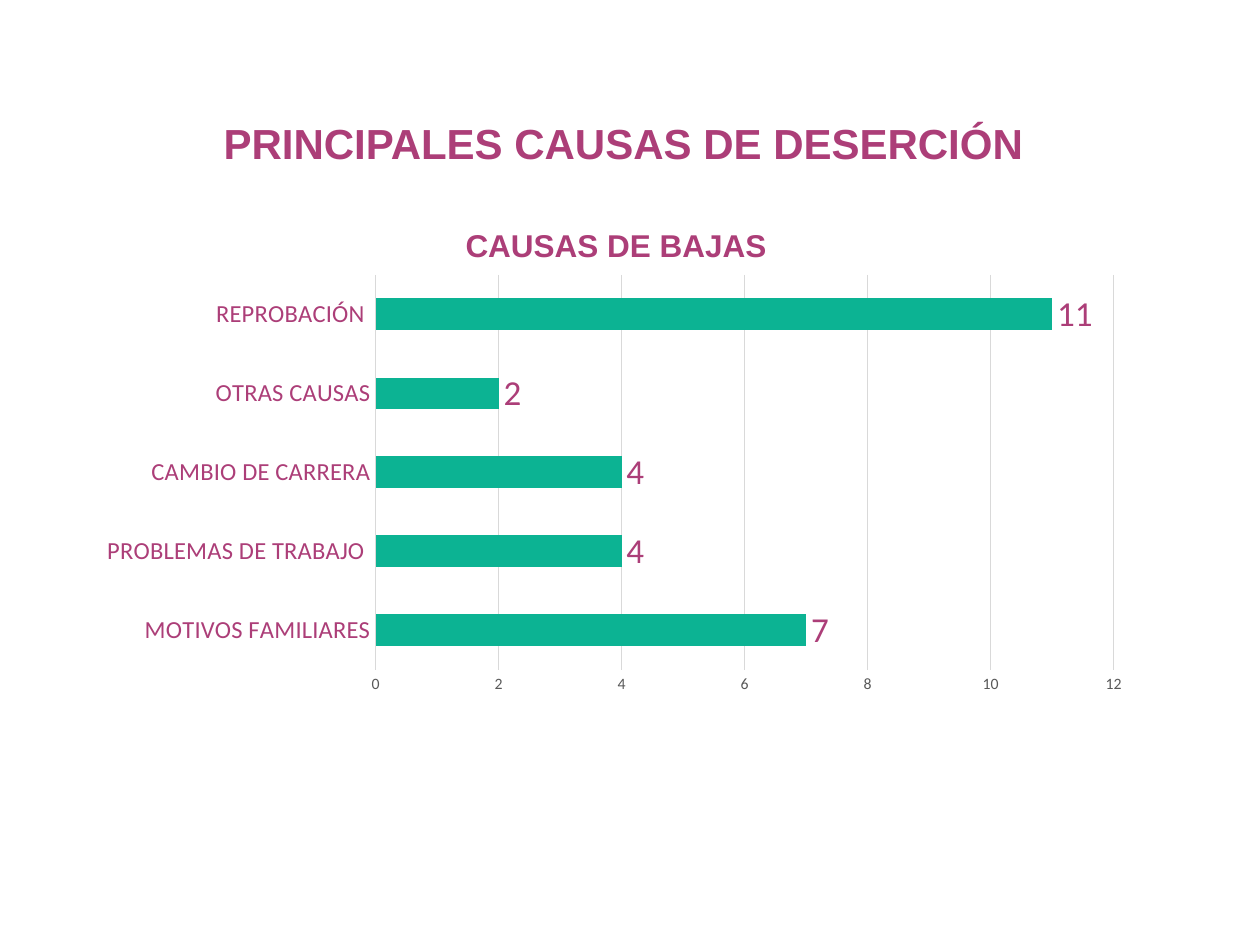
"""Build a slide with a bar chart of the main causes of student dropout."""
from lxml import etree
from pptx import Presentation
from pptx import util as u
from pptx.chart.data import CategoryChartData
from pptx.dml.color import RGBColor
from pptx.enum import chart as kinds, text
from pptx.oxml.ns import qn

PLUM = RGBColor(0xAC, 0x3E, 0x78)
GREEN = RGBColor(0x0C, 0xB3, 0x93)
GRAY = RGBColor(0x59, 0x59, 0x59)
PALE = RGBColor(0xD9, 0xD9, 0xD9)

HEADING = "PRINCIPALES CAUSAS DE DESERCIÓN "
CHART_TITLE = "CAUSAS DE BAJAS "
CAUSES = {
    "MOTIVOS FAMILIARES": 7,
    "PROBLEMAS DE TRABAJO ": 4,
    "CAMBIO DE CARRERA": 4,
    "OTRAS CAUSAS": 2,
    "REPROBACIÓN ": 11,
}
HEADING_BOX = (2.79, 2.24, 19.79, 1.27)
CHART_BOX = (1.83, 4.01, 21.26, 10.21)
TITLE_LAYOUT = {"xMode": "edge", "yMode": "edge", "x": 0.35, "y": 0.04}
PLOT_LAYOUT = {"layoutTarget": "inner", "xMode": "edge", "yMode": "edge",
               "x": 0.27, "y": 0.15, "w": 0.7, "h": 0.78}
FONTS = {
    "heading": {"name": "Arial", "size": u.Pt(24), "bold": True, "color": PLUM},
    "title": {"name": "Arial", "size": u.Pt(18), "bold": True, "color": PLUM},
    "causes": {"name": "Calibri", "size": u.Pt(14), "bold": False, "color": PLUM},
    "scale": {"name": "Calibri", "size": u.Pt(9), "bold": False, "color": GRAY},
    "values": {"name": "Calibri", "size": u.Pt(20), "bold": False, "color": PLUM},
}


def style(font, role):
    for key, value in FONTS[role].items():
        if key == "color":
            font.color.rgb = value
        else:
            setattr(font, key, value)


def set_layout(parent, values, before):
    for old in parent.findall(qn("c:layout")):
        parent.remove(old)
    layout = etree.Element(qn("c:layout"))
    manual = etree.SubElement(layout, qn("c:manualLayout"))
    for key, value in values.items():
        etree.SubElement(manual, qn(f"c:{key}")).set("val", str(value))
    parent.find(qn(before)).addprevious(layout)


def add_heading(page):
    box = page.shapes.title
    box.left, box.top, box.width, box.height = map(u.Cm, HEADING_BOX)
    frame = box.text_frame
    frame.text = HEADING
    frame.word_wrap = True
    frame.auto_size = text.MSO_AUTO_SIZE.SHAPE_TO_FIT_TEXT
    frame.vertical_anchor = text.MSO_ANCHOR.TOP
    para = frame.paragraphs[0]
    para.alignment = text.PP_ALIGN.CENTER
    style(para.runs[0].font, "heading")


def add_causes_chart(page):
    data = CategoryChartData()
    data.categories = list(CAUSES)
    data.add_series("Series 1", list(CAUSES.values()))
    chart = page.shapes.add_chart(
        kinds.XL_CHART_TYPE.BAR_CLUSTERED, *map(u.Cm, CHART_BOX), data).chart
    chart.font.name, chart.font.size = "Calibri", u.Pt(10)
    chart.has_legend = False

    title = chart.chart_title
    title.text_frame.text = CHART_TITLE
    style(title.text_frame.paragraphs[0].runs[0].font, "title")
    title.include_in_layout = False
    set_layout(title.format.line and title._element, TITLE_LAYOUT, "c:overlay")

    for axis, role in ((chart.category_axis, "causes"), (chart.value_axis, "scale")):
        axis.major_tick_mark = axis.minor_tick_mark = kinds.XL_TICK_MARK.NONE
        axis.format.line.fill.background()
        style(axis.tick_labels.font, role)
    scale = chart.value_axis
    scale.minimum_scale, scale.maximum_scale, scale.major_unit = 0, 12, 2
    grid = scale.major_gridlines.format.line
    grid.color.rgb, grid.width = PALE, u.Pt(0.75)

    plot = chart.plots[0]
    plot.gap_width, plot.vary_by_categories = 150, False
    bars = plot.series[0]
    bars.format.fill.solid()
    bars.format.fill.fore_color.rgb = GREEN
    labels = bars.data_labels
    labels.show_value = True
    labels.position = kinds.XL_LABEL_POSITION.OUTSIDE_END
    style(labels.font, "values")
    plot_area = chart.element.find(".//" + qn("c:plotArea"))
    set_layout(plot_area, PLOT_LAYOUT, "c:barChart")


def main():
    deck = Presentation()
    deck.slide_width, deck.slide_height = u.Cm(25.4), u.Cm(19.05)
    page = deck.slides.add_slide(deck.slide_layouts.get_by_name("Title Only"))
    add_heading(page)
    add_causes_chart(page)
    deck.save("out.pptx")


if __name__ == "__main__":
    main()
